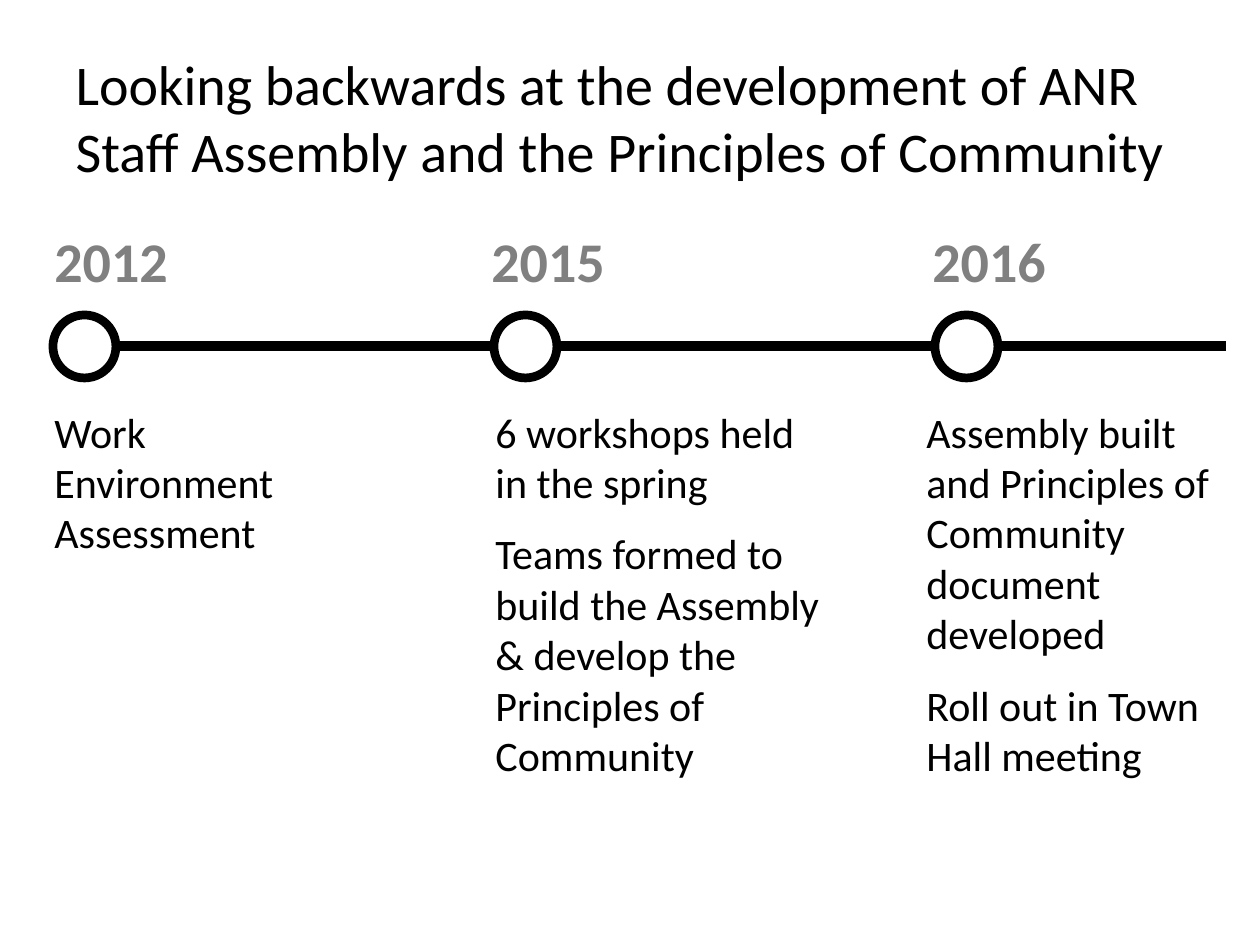
from dataclasses import dataclass

from lxml import etree
from pptx import Presentation
from pptx import util as u
from pptx.dml.color import RGBColor
from pptx.enum import shapes, text
from pptx.oxml.ns import qn


@dataclass(frozen=True)
class Theme:
    font: str = "Calibri"
    ink: RGBColor = RGBColor(0, 0, 0)
    year: RGBColor = RGBColor(128, 128, 128)
    heading_size: int = 32
    body_size: int = 24
    ring_width: int = 5
    line_width: int = 6


theme = Theme()
EMU_PER_PX = 914400 / 126


def px(*lengths):
    return [u.Emu(round(length * EMU_PER_PX)) for length in lengths]


def write(frame, lines, size, color, bold=False, gap=0):
    """Fill a text frame with left-aligned paragraphs, gap points after each."""
    frame.text = "\n".join(lines)
    for para in frame.paragraphs:
        para.alignment = text.PP_ALIGN.LEFT
        para.space_after = u.Pt(gap)
        for span in para.runs:
            span.font.name = theme.font
            span.font.size = u.Pt(size)
            span.font.bold = bold
            span.font.color.rgb = color


deck = Presentation()
deck.slide_width, deck.slide_height = px(1260, 945)
page = deck.slides.add_slide(deck.slide_layouts[5])

title = page.shapes.title
title.left, title.top, title.width, title.height = px(63, 38, 1134, 158)
title.text_frame.vertical_anchor = text.MSO_ANCHOR.MIDDLE
title.text_frame.auto_size = text.MSO_AUTO_SIZE.NONE
write(
    title.text_frame,
    ["Looking backwards at the development of ANR Staff Assembly and the Principles of Community"],
    theme.heading_size,
    theme.ink,
)

# Year, left of the year, left and width of the notes, space after, notes
milestones = [
    ("2012", 42, 42, 273, 0, ["Work Environment", "Assessment"]),
    ("2015", 479, 483, 357, 12, [
        "6 workshops held in the spring",
        "Teams formed to build the Assembly & develop the Principles of Community",
    ]),
    ("2016", 920, 914, 336, 12, [
        "Assembly built and Principles of Community document developed",
        "Roll out in Town Hall meeting",
    ]),
]
RING, RING_TOP, FIRST_RING, STEP = 63, 315, 53, 441
LINE_Y, LINE_END = 346, 1226

for index, (year, year_left, notes_left, notes_width, gap, notes) in enumerate(milestones):
    ring_left = FIRST_RING + index * STEP
    line_end = min(ring_left + STEP, LINE_END)

    line = page.shapes.add_connector(
        shapes.MSO_CONNECTOR.STRAIGHT, *px(ring_left + RING, LINE_Y, line_end, LINE_Y)
    )
    line.line.color.rgb = theme.ink
    line.line.width = u.Pt(theme.line_width)
    etree.SubElement(line._element.spPr, qn("a:effectLst"))

    ring = page.shapes.add_shape(shapes.MSO_SHAPE.OVAL, *px(ring_left, RING_TOP, RING, RING))
    ring.shadow.inherit = False
    ring.fill.background()
    ring.line.color.rgb = theme.ink
    ring.line.width = u.Pt(theme.ring_width)

    year_box = page.shapes.add_textbox(*px(year_left, 220, 140, 81))
    year_box.text_frame.word_wrap = False
    write(year_box.text_frame, [year], theme.heading_size, theme.year, bold=True)

    notes_box = page.shapes.add_textbox(*px(notes_left, 400, notes_width, 390 if gap else 165))
    notes_box.text_frame.word_wrap = True
    write(notes_box.text_frame, notes, theme.body_size, theme.ink, gap=gap)

deck.save("out.pptx")
